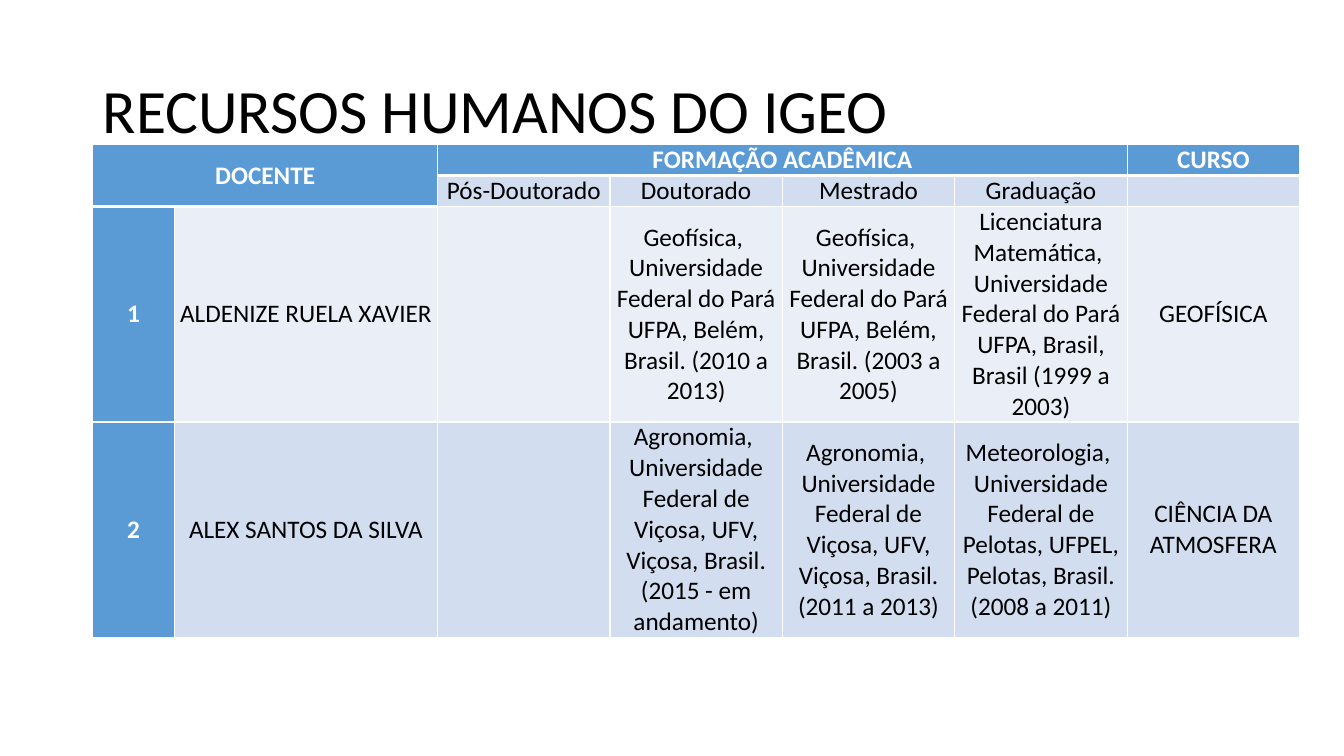
from lxml import etree
from pptx import Presentation
from pptx.dml.color import RGBColor
from pptx.enum.text import MSO_ANCHOR, PP_ALIGN
from pptx.oxml.ns import qn
from pptx.util import Inches, Pt

MIDDLE = MSO_ANCHOR.MIDDLE
LEFT, CENTER = PP_ALIGN.LEFT, PP_ALIGN.CENTER
FONT = "Calibri"
WHITE = RGBColor(0xFF, 0xFF, 0xFF)
BLACK = RGBColor(0x00, 0x00, 0x00)
HEADER_BLUE = RGBColor(0x5B, 0x9B, 0xD5)
DARK_BAND = RGBColor(0xD2, 0xDE, 0xEF)
LIGHT_BAND = RGBColor(0xEA, 0xEF, 0xF7)

COLUMN_WIDTHS = [0.81, 2.61] + [1.71] * 5
ROW_HEIGHTS = [0.31, 0.31, 2.13, 2.13]
STAFF = [
    ["DOCENTE", "", "FORMAÇÃO ACADÊMICA", "", "", "", "CURSO"],
    ["", "", "Pós-Doutorado", "Doutorado", "Mestrado", "Graduação", ""],
    ["1", "ALDENIZE RUELA XAVIER", "",
     "Geofísica,  Universidade Federal do Pará UFPA, Belém, Brasil. (2010 a 2013)",
     "Geofísica,  Universidade Federal do Pará UFPA, Belém, Brasil. (2003 a 2005)",
     "Licenciatura Matemática,  Universidade Federal do Pará UFPA, Brasil, "
     "Brasil (1999 a 2003)",
     "GEOFÍSICA"],
    ["2", "ALEX SANTOS DA SILVA", "",
     "Agronomia,  Universidade Federal de Viçosa, UFV, Viçosa, Brasil. "
     "(2015 - em andamento)",
     "Agronomia,  Universidade Federal de Viçosa, UFV, Viçosa, Brasil. (2011 a 2013)",
     "Meteorologia,  Universidade Federal de Pelotas, UFPEL, Pelotas, Brasil. "
     "(2008 a 2011)",
     "CIÊNCIA DA ATMOSFERA"],
]


def format_text(text_frame, size, color, align, bold=False):
    for paragraph in text_frame.paragraphs:
        paragraph.alignment = align
        for run in paragraph.runs:
            run.font.name = FONT
            run.font.size = Pt(size)
            run.font.bold = bold
            run.font.color.rgb = color


def add_borders(cell, bottom_width):
    """Draw white cell borders, 1 pt wide except at the bottom."""
    properties = cell._tc.get_or_add_tcPr()
    widths = {"a:lnL": 1, "a:lnR": 1, "a:lnT": 1, "a:lnB": bottom_width}
    for position, (side, width) in enumerate(widths.items()):
        line = etree.Element(qn(side), w=str(Pt(width)))
        fill = etree.SubElement(line, qn("a:solidFill"))
        etree.SubElement(fill, qn("a:srgbClr"), val=str(WHITE))
        properties.insert(position, line)


def fill_cell(cell, text, row, column):
    is_header = row == 0 or column == 0
    band = LIGHT_BAND if row == 2 else DARK_BAND
    cell.text_frame.text = text
    format_text(cell.text_frame, 18, WHITE if is_header else BLACK, CENTER, is_header)
    cell.vertical_anchor = MIDDLE
    cell.margin_left = cell.margin_right = Inches(0.02)
    cell.margin_top = cell.margin_bottom = 0
    cell.fill.solid()
    cell.fill.fore_color.rgb = HEADER_BLUE if is_header else band
    add_borders(cell, 3 if row == 0 else 1)


def add_title(slide, text):
    title = slide.shapes.title
    title.left, title.top = Inches(0.92), Inches(0.4)
    title.width, title.height = Inches(11.5), Inches(1.45)
    title.text_frame.text = text
    title.text_frame.vertical_anchor = MIDDLE
    title.text_frame.paragraphs[0].line_spacing = 0.9
    format_text(title.text_frame, 44, BLACK, LEFT)


def add_staff_table(slide):
    table = slide.shapes.add_table(
        len(ROW_HEIGHTS), len(COLUMN_WIDTHS), Inches(0.92), Inches(1.43),
        Inches(sum(COLUMN_WIDTHS)), Inches(sum(ROW_HEIGHTS))).table
    table.first_row = table.horz_banding = False
    for column, width in zip(table.columns, COLUMN_WIDTHS):
        column.width = Inches(width)
    for row, height in zip(table.rows, ROW_HEIGHTS):
        row.height = Inches(height)
    for row, texts in enumerate(STAFF):
        for column, text in enumerate(texts):
            fill_cell(table.cell(row, column), text, row, column)
    table.cell(0, 0).merge(table.cell(1, 1))
    table.cell(0, 2).merge(table.cell(0, 5))


def main():
    presentation = Presentation()
    presentation.slide_width = Inches(13.33)
    presentation.slide_height = Inches(7.5)
    title_only = presentation.slide_layouts[5]
    slide = presentation.slides.add_slide(title_only)
    add_title(slide, "RECURSOS HUMANOS DO IGEO")
    add_staff_table(slide)
    presentation.save("out.pptx")


if __name__ == "__main__":
    main()
